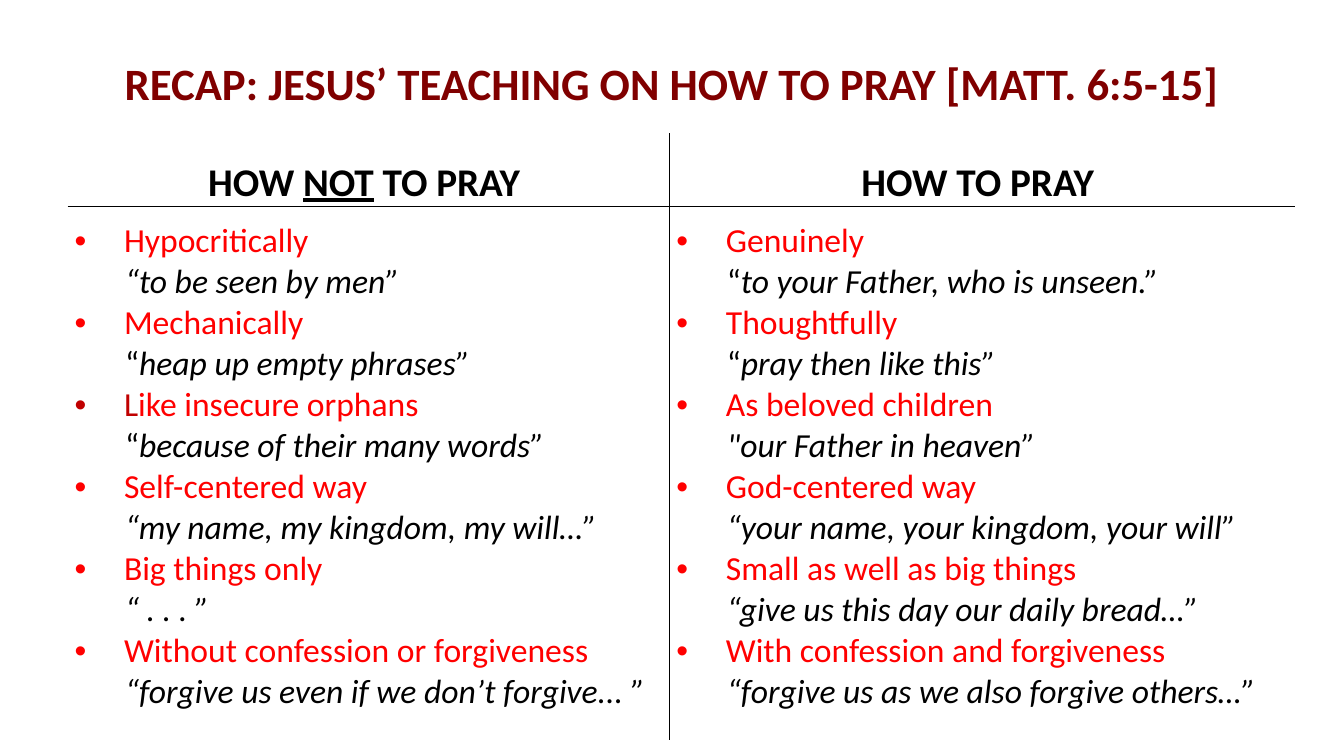
import pptx
import pptx.util
import pptx.dml.color
import pptx.enum.text
import pptx.oxml
import pptx.oxml.ns

Inches = pptx.util.Inches
Pt = pptx.util.Pt
CENTER = pptx.enum.text.PP_ALIGN.CENTER
BLACK, RED, DARK_RED, MAROON = "000000", "FF0000", "C00000", "800000"
NAMESPACE = pptx.oxml.ns.nsdecls("a")


def add_run(paragraph, text, size, color, bold=False, italic=False):
    run = paragraph.add_run()
    run.text = text
    run.font.name = "Calibri"
    run.font.size = Pt(size)
    run.font.bold = bold
    run.font.italic = italic
    run.font.color.rgb = pptx.dml.color.RGBColor.from_string(color)
    return run


def set_borders(cell, visible_sides):
    properties = cell._tc.get_or_add_tcPr()
    for side in "LRTB":
        fill = "<a:noFill/>"
        if side in visible_sides:
            fill = f'<a:solidFill><a:srgbClr val="{BLACK}"/></a:solidFill>'
        properties.append(pptx.oxml.parse_xml(
            f'<a:ln{side} {NAMESPACE} w="{Pt(1)}">{fill}</a:ln{side}>'))


presentation = pptx.Presentation()
presentation.slide_width = Inches(13.33)
presentation.slide_height = Inches(7.5)
slide = presentation.slides.add_slide(presentation.slide_layouts[5])

# Title
title = slide.shapes.title
title.left, title.top = Inches(0.33), Inches(0.5)
title.width, title.height = Inches(12.67), Inches(0.58)
title.text_frame.word_wrap = True
title.text_frame.auto_size = pptx.enum.text.MSO_AUTO_SIZE.NONE
title.text_frame.vertical_anchor = pptx.enum.text.MSO_ANCHOR.TOP
title_paragraph = title.text_frame.paragraphs[0]
title_paragraph.alignment = CENTER
add_run(title_paragraph, "RECAP: JESUS’ TEACHING ON HOW TO PRAY [MATT. 6:5-15]",
        32, MAROON, bold=True)

# Each column: heading runs, then points as (heading, upright mark, italic quote)
columns = [
    (["HOW ", "NOT", " TO PRAY "], [
        ("Hypocritically", "", "“to be seen by men”"),
        ("Mechanically", "“", "heap up empty phrases”"),
        ("Like insecure orphans", "“", "because of their many words”"),
        ("Self-centered way", "", "“my name, my kingdom, my will…”"),
        ("Big things only", "", "“ . . . ”"),
        ("Without confession or forgiveness", "",
         "“forgive us even if we don’t forgive... ”"),
    ]),
    (["HOW TO PRAY "], [
        ("Genuinely", "“", "to your Father, who is unseen.”"),
        ("Thoughtfully", "“", "pray then like this”"),
        ("As beloved children", "", "\"our Father in heaven”"),
        ("God-centered way", "", "“your name, your kingdom, your will”"),
        ("Small as well as big things", "", "“give us this day our daily bread…”"),
        ("With confession and forgiveness", "",
         "“forgive us as we also forgive others…”"),
    ]),
]

# Table with only the inner lines drawn
table = slide.shapes.add_table(2, 2, Inches(0.67), Inches(1.32),
                               Inches(12.17), Inches(6.02)).table
table.first_row = False
table.horz_banding = False
for column, width in zip(table.columns, (5.97, 6.2)):
    column.width = Inches(width)
for row, height in zip(table.rows, (0.73, 5.29)):
    row.height = Inches(height)

for column_index, (heading_runs, points) in enumerate(columns):
    heading_cell = table.cell(0, column_index)
    points_cell = table.cell(1, column_index)
    inner_side = "RL"[column_index]
    for cell, row_side in ((heading_cell, "B"), (points_cell, "T")):
        set_borders(cell, inner_side + row_side)
        cell.fill.background()
        cell.margin_left = cell.margin_right = Inches(0.07)
        cell.margin_top = cell.margin_bottom = 0

    # Column heading
    heading_cell.vertical_anchor = pptx.enum.text.MSO_ANCHOR.BOTTOM
    paragraph = heading_cell.text_frame.paragraphs[0]
    paragraph.alignment = CENTER
    paragraph.line_spacing = 1.15
    for text in heading_runs:
        run = add_run(paragraph, text, 28, BLACK, bold=True)
        run.font.underline = text == "NOT"

    # Bulleted points, each followed by its quotation
    points_cell.margin_top = Inches(0.14)
    points_frame = points_cell.text_frame
    for point_index, (point, upright_mark, quote) in enumerate(points):
        paragraph = (points_frame.add_paragraph() if point_index
                     else points_frame.paragraphs[0])
        properties = paragraph._p.get_or_add_pPr()
        properties.set("marL", str(Inches(0.49)))
        properties.set("indent", str(-Inches(0.49)))
        for bullet in ('buFont {} typeface="Arial"', 'buChar {} char="•"'):
            properties.append(pptx.oxml.parse_xml(f"<a:{bullet.format(NAMESPACE)}/>"))
        if point.startswith("Like"):
            add_run(paragraph, point[0], 24, DARK_RED)
            point = point[1:]
        add_run(paragraph, point, 24, RED)

        paragraph = points_frame.add_paragraph()
        paragraph.level = 1
        properties = paragraph._p.get_or_add_pPr()
        properties.set("marL", str(Inches(0.5)))
        properties.set("indent", "0")
        if upright_mark:
            add_run(paragraph, upright_mark, 24, BLACK)
        add_run(paragraph, quote, 24, BLACK, italic=True)

presentation.save("out.pptx")
